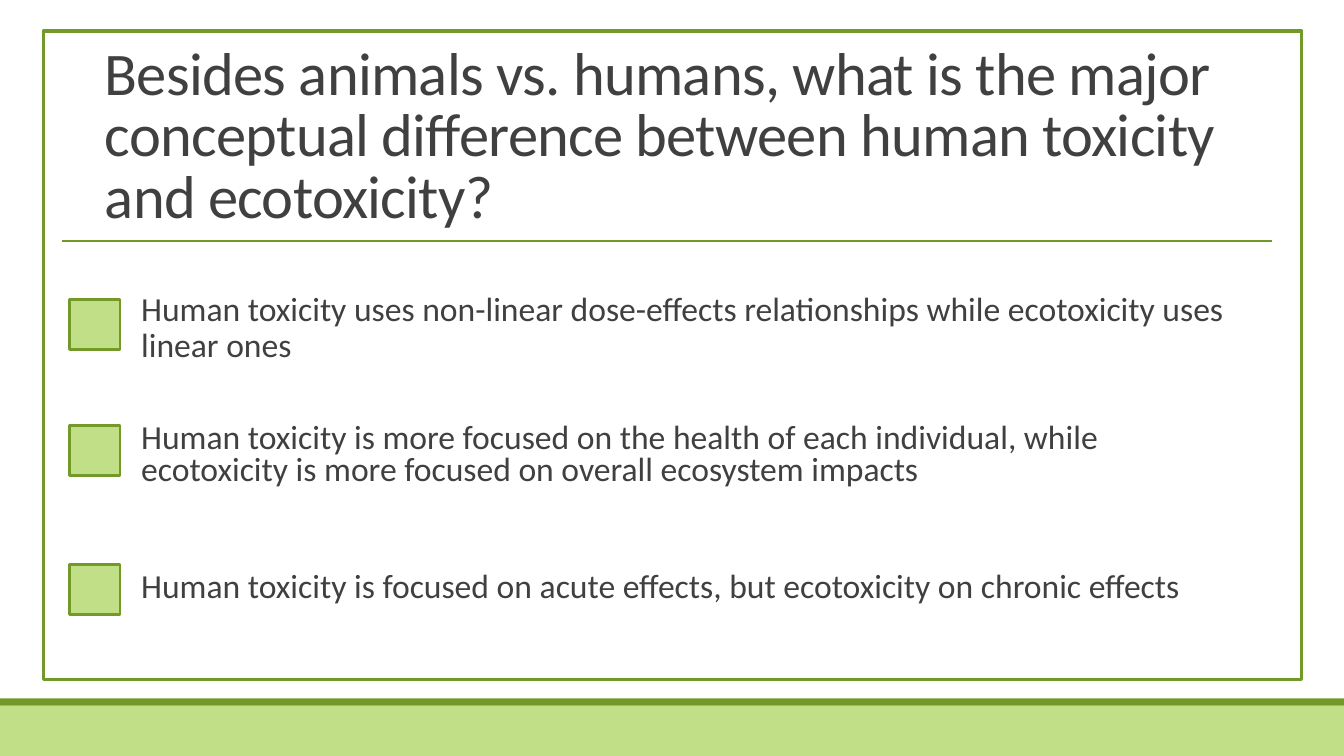
from lxml import etree
from pptx import Presentation
from pptx.dml.color import RGBColor
from pptx.enum.shapes import MSO_CONNECTOR, MSO_SHAPE
from pptx.enum.text import MSO_ANCHOR, MSO_AUTO_SIZE, PP_ALIGN
from pptx.oxml.ns import qn
from pptx.util import Inches, Pt

RECT = MSO_SHAPE.RECTANGLE
STRAIGHT = MSO_CONNECTOR.STRAIGHT
TOP, BOTTOM = MSO_ANCHOR.TOP, MSO_ANCHOR.BOTTOM
NO_FIT = MSO_AUTO_SIZE.NONE
LEFT = PP_ALIGN.LEFT


def rgb(value):
    return RGBColor.from_string(value)


class QuizSlide:
    """Holds the quiz style and the slide being drawn."""

    font, ink, green, pale = "Calibri", "404040", "739A28", "C1DF87"

    def __init__(self, prs):
        self.s = prs.slides.add_slide(prs.slide_layouts[5])

    def rect(self, x, y, w, h, fill=None, line=None, width=2):
        sp = self.s.shapes.add_shape(RECT, Inches(x), Inches(y), Inches(w), Inches(h))
        sp.shadow.inherit = False
        if fill:
            sp.fill.solid()
            sp.fill.fore_color.rgb = rgb(fill)
        else:
            sp.fill.background()
        if line:
            sp.line.color.rgb = rgb(line)
            sp.line.width = Pt(width)
        else:
            sp.line.fill.background()

    def rule(self, x1, x2, y):
        c = self.s.shapes.add_connector(STRAIGHT, Inches(x1), Inches(y), Inches(x2), Inches(y))
        c.line.color.rgb = rgb(self.green)
        c.line.width = Pt(1)
        etree.SubElement(c._element.spPr, qn("a:effectLst"))

    def fill_text(self, sp, text, size, spacing, inset, anchor):
        tf = sp.text_frame
        tf.word_wrap = True
        tf.auto_size = NO_FIT
        tf.vertical_anchor = anchor
        tf.margin_left = tf.margin_right = Inches(inset)
        tf.margin_top = tf.margin_bottom = Inches(0.05)
        p = tf.paragraphs[0]
        p.alignment = LEFT
        p.line_spacing = spacing
        r = p.add_run()
        r.text = text
        r.font.name = self.font
        r.font.size = Pt(size)
        r.font.color.rgb = rgb(self.ink)
        return r

    def title(self, text, x, y, w, h):
        sp = self.s.shapes.title
        sp.left, sp.top, sp.width, sp.height = Inches(x), Inches(y), Inches(w), Inches(h)
        r = self.fill_text(sp, text, 43.2, 0.85, 0.1, BOTTOM)
        r._r.get_or_add_rPr().set("spc", "-50")

    def text(self, text, x, y, w, h, spacing):
        sp = self.s.shapes.add_textbox(Inches(x), Inches(y), Inches(w), Inches(h))
        self.fill_text(sp, text, 24, spacing, 0, TOP)

    def answer(self, text, box_y, text_y, w, h, spacing):
        self.rect(0.69, box_y, 0.5, 0.5, self.pale, self.green)
        self.text(text, 1.4, text_y, w, h, spacing)


ANSWERS = [
    ("Human toxicity uses non-linear dose-effects relationships while "
     "ecotoxicity uses linear ones", 2.97, 2.85, 11.13, 0.92, 0.9),
    ("Human toxicity is more focused on the health of each individual, while "
     "ecotoxicity is more focused on overall ecosystem impacts", 4.22, 4.15, 10.82, 0.78, 0.8),
    ("Human toxicity is focused on acute effects, but ecotoxicity on chronic effects",
     5.6, 5.6, 10.82, 0.53, 0.9),
]


def main():
    prs = Presentation()
    prs.slide_width, prs.slide_height = Inches(13.33), Inches(7.5)
    quiz = QuizSlide(prs)
    quiz.rect(0, 7, 13.33, 0.5, quiz.pale)
    quiz.rect(0, 6.93, 13.33, 0.07, quiz.green)
    quiz.rect(0.43, 0.31, 12.48, 6.43, line=quiz.green, width=2.5)
    quiz.title("Besides animals vs. humans, what is the major conceptual difference "
               "between human toxicity and ecotoxicity?", 0.94, 1, 11.28, 1.34)
    quiz.rule(0.62, 12.62, 2.39)
    for answer in ANSWERS:
        quiz.answer(*answer)
    prs.save("out.pptx")


if __name__ == "__main__":
    main()
